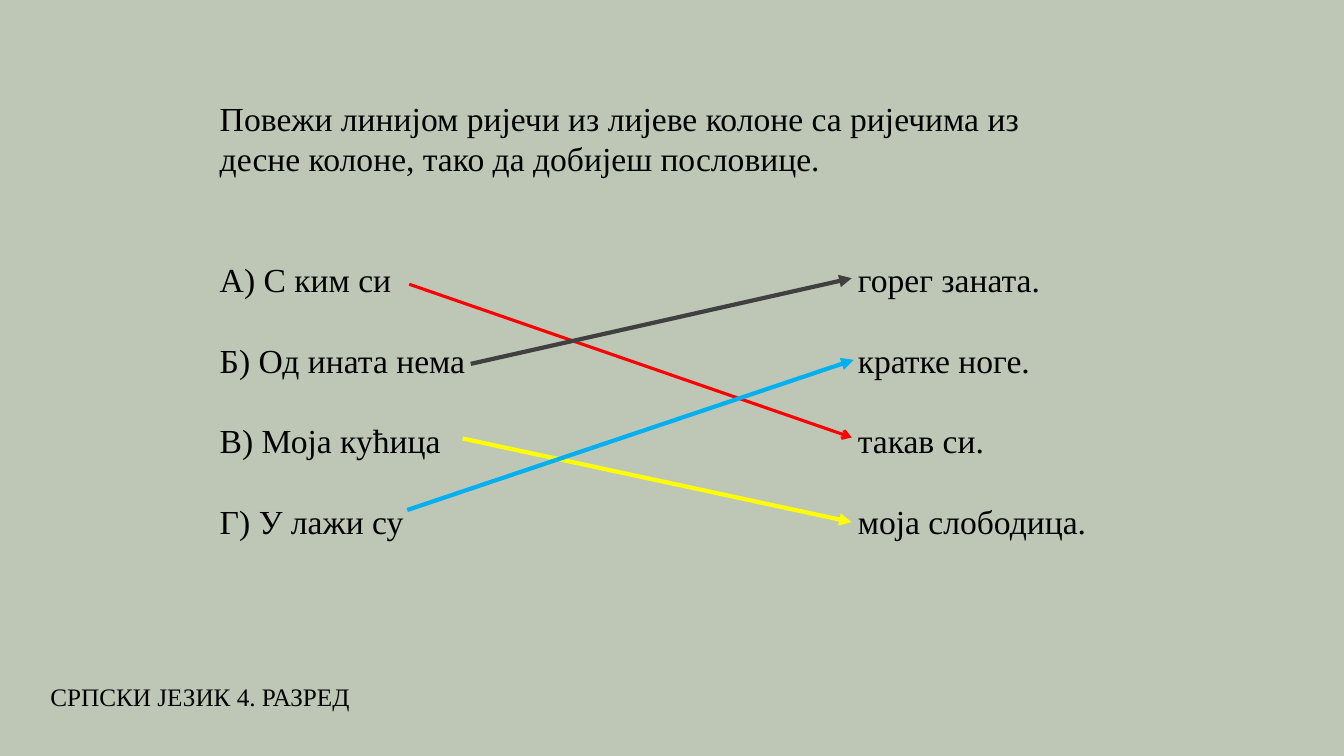
from dataclasses import dataclass

from lxml.etree import SubElement
from pptx import Presentation
from pptx.dml.color import RGBColor
from pptx.enum.shapes import MSO_CONNECTOR
from pptx.enum.text import MSO_ANCHOR, MSO_AUTO_SIZE, PP_ALIGN
from pptx.oxml.ns import qn
from pptx.util import Inches, Pt


@dataclass(frozen=True)
class Theme:
    font: str = "Times New Roman"
    exercise_size: float = 24
    footer_size: float = 18
    line_height: float = 28.8
    background: str = "BEC7B6"
    ink: str = "000000"
    red: str = "FF0000"
    grey: str = "404040"
    yellow: str = "FFFF00"
    blue: str = "00B0F0"


def apply(target, values):
    for name, value in values.items():
        setattr(target, name, value)


class MatchingSlide:
    """Places elements on a grid of 80 columns and 45 rows."""

    def __init__(self, deck, theme):
        self.theme = theme
        self.column, self.row = deck.slide_width / 80, deck.slide_height / 45
        self.slide = deck.slides.add_slide(deck.slide_layouts.get_by_name("Two Content"))
        fill = self.slide.background.fill
        fill.solid()
        fill.fore_color.rgb = RGBColor.from_string(theme.background)

    def place(self, *cells):
        units = (self.column, self.row) * 2
        return [round(cell * unit) for cell, unit in zip(cells, units)]

    def fill_text(self, holder, area, lines, size, spacing=None, gap=0, anchor=MSO_ANCHOR.TOP):
        apply(holder, dict(zip(("left", "top", "width", "height"), self.place(*area))))
        frame = holder.text_frame
        apply(frame, {
            "text": "\n".join(lines), "word_wrap": True, "vertical_anchor": anchor,
            "auto_size": MSO_AUTO_SIZE.NONE, "margin_left": 0, "margin_right": 0,
            "margin_top": 0, "margin_bottom": 0,
        })
        for position, paragraph in enumerate(frame.paragraphs):
            properties = paragraph._p.get_or_add_pPr()
            properties.set("marL", "0")
            properties.set("indent", "0")
            SubElement(properties, qn("a:buNone"))
            apply(paragraph, {
                "alignment": PP_ALIGN.LEFT, "line_spacing": spacing,
                "space_before": Pt(gap if position else 0), "space_after": Pt(0),
            })
            apply(paragraph.font, {"name": self.theme.font, "size": Pt(size)})
            paragraph.font.color.rgb = RGBColor.from_string(self.theme.ink)

    def exercise(self, holder, area, lines):
        height = self.theme.line_height
        self.fill_text(holder, area, lines, self.theme.exercise_size, Pt(height), gap=height)

    def task(self, area, text):
        self.exercise(self.slide.shapes.title, area, [text])

    def word_column(self, index, area, words):
        self.exercise(self.slide.placeholders[index], area, words)

    def footer(self, area, text):
        label = self.slide.shapes.add_textbox(*self.place(*area))
        self.fill_text(label, area, [text], self.theme.footer_size, anchor=MSO_ANCHOR.MIDDLE)

    def arrow(self, start, end, color, width=3, head="triangle"):
        link = self.slide.shapes.add_connector(
            MSO_CONNECTOR.STRAIGHT, *self.place(*start, *end))
        link.line.color.rgb = RGBColor.from_string(color)
        link.line.width = Pt(width)
        properties = link._element.spPr
        SubElement(properties.get_or_add_ln(), qn("a:tailEnd"), type=head)
        SubElement(properties, qn("a:effectLst"))


def main():
    deck = Presentation()
    apply(deck, {"slide_width": Inches(13.333), "slide_height": Inches(7.5)})
    theme = Theme()
    page = MatchingSlide(deck, theme)

    # Task
    page.task((13.08, 5.82, 52.26, 4.8),
              "Повежи линијом ријечи из лијеве колоне са ријечима из десне колоне, "
              "тако да добијеш пословице.")

    # Halves of the proverbs
    page.word_column(1, (13.08, 15.42, 17, 16.8),
                     ["А) С ким си", "Б) Од ината нема", "В) Моја кућица", "Г) У лажи су"])
    page.word_column(2, (51.06, 15.42, 17, 16.8),
                     ["горег заната.", "кратке ноге.", "такав си.", "моја слободица."])

    # Links between the halves
    page.arrow((24.36, 16.92), (50.7, 26.04), theme.red, width=2.25, head="arrow")
    page.arrow((28.02, 21.66), (50.7, 16.56), theme.grey)
    page.arrow((27.54, 26.1), (50.7, 31.08), theme.yellow)
    page.arrow((24.24, 30.36), (50.82, 21.42), theme.blue)

    # Subject and grade
    page.footer((3, 40.02, 20, 2.88), "СРПСКИ ЈЕЗИК 4. РАЗРЕД")

    deck.save("out.pptx")


if __name__ == "__main__":
    main()
